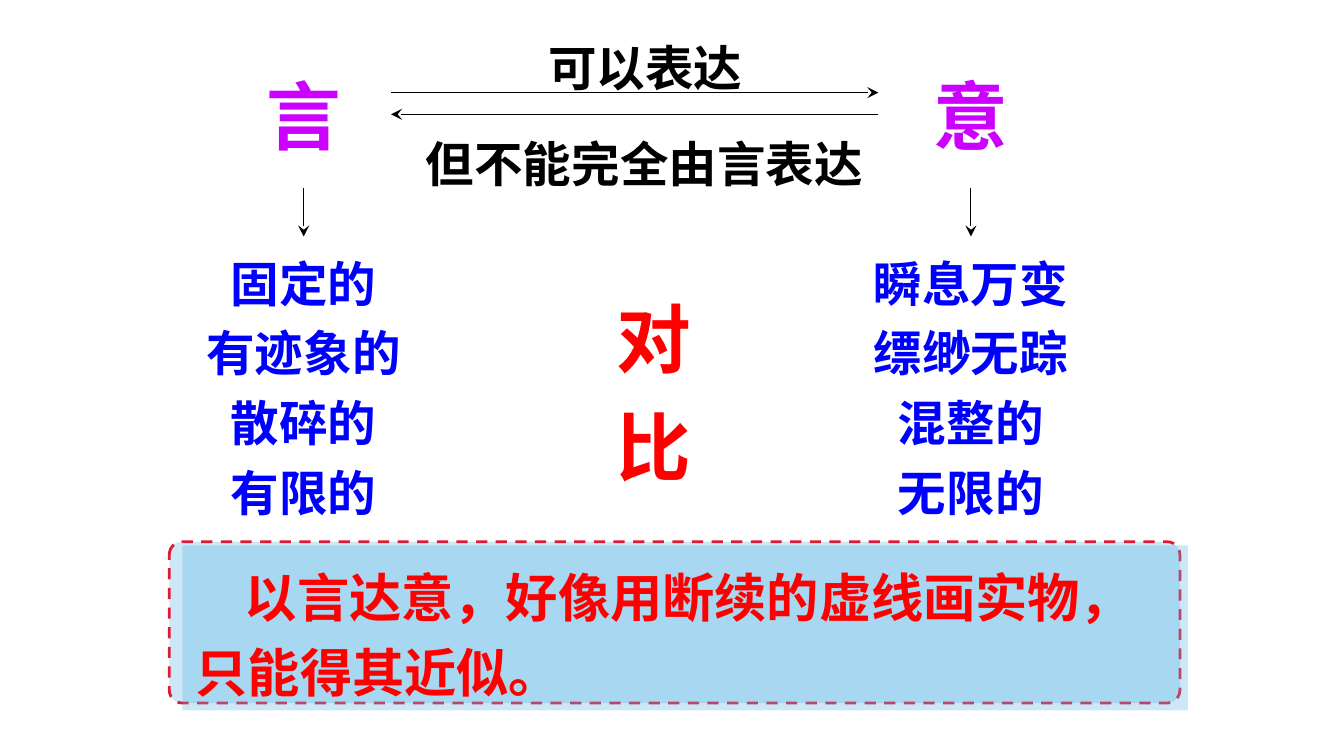
from lxml.etree import SubElement
from pptx import Presentation
from pptx.dml.color import RGBColor
from pptx.enum.dml import MSO_LINE
from pptx.enum.shapes import MSO_CONNECTOR, MSO_SHAPE
from pptx.enum.text import MSO_ANCHOR, MSO_AUTO_SIZE, PP_ALIGN
from pptx.oxml.ns import qn
from pptx.util import Cm, Pt

FONT = "Noto Sans CJK SC"
BLACK, PURPLE, BLUE, RED = "000000", "CC00FF", "0000FF", "FF0000"
SKY, CRIMSON = "58B6E5", "DE1A37"

# Centre of the column (cm), heading, traits
COLUMNS = [
    (5.74, "言", ["固定的", "有迹象的", "散碎的", "有限的"]),
    (18.35, "意", ["瞬息万变", "缥缈无踪", "混整的", "无限的"]),
]
# Text, then left, top, width, height (cm)
RELATIONS = [
    ("可以表达", (10.11, 0.38, 4.9, 1.57)),
    ("但不能完全由言表达", (7.8, 2.18, 9.5, 1.57)),
]
CONTRAST = "对比"
CONCLUSION = "以言达意，好像用断续的虚线画实物，只能得其近似。"


def color(value):
    return RGBColor.from_string(value)


def write(shape, lines, size, hue, align=PP_ALIGN.CENTER):
    frame = shape.text_frame
    frame.word_wrap = True
    frame.auto_size = MSO_AUTO_SIZE.SHAPE_TO_FIT_TEXT
    frame.vertical_anchor = MSO_ANCHOR.MIDDLE
    frame.text = "\n".join(lines)
    for para in frame.paragraphs:
        para.alignment = align
        para.line_spacing = 1.2
        font = para.font
        font.size, font.bold = Pt(size), True
        font.color.rgb = color(hue)
        font.name = FONT
        # Chinese text takes the East Asian typeface
        SubElement(font._element, qn("a:ea"), typeface=FONT)


def add_text(slide, place, lines, size, hue, align=PP_ALIGN.CENTER):
    box = slide.shapes.add_textbox(*map(Cm, place))
    write(box, lines, size, hue, align)


def add_arrow(slide, *ends):
    arrow = slide.shapes.add_connector(MSO_CONNECTOR.STRAIGHT, *map(Cm, ends))
    arrow.line.color.rgb = color(BLACK)
    arrow.line.width = Pt(0.5)
    SubElement(arrow.line._get_or_add_ln(), qn("a:tailEnd"), type="stealth")
    SubElement(arrow._element.spPr, qn("a:effectLst"))


def add_panel(slide, kind, place):
    """Add a borderless sky-blue panel with 30 % opacity."""
    panel = slide.shapes.add_shape(kind, *map(Cm, place))
    panel.shadow.inherit = False
    panel.fill.solid()
    panel.fill.fore_color.rgb = color(SKY)
    tint = panel._element.spPr.find(qn("a:solidFill"))[0]
    SubElement(tint, qn("a:alpha"), val="30000")
    panel.line.fill.background()
    return panel


def main():
    deck = Presentation()
    deck.slide_width, deck.slide_height = Cm(25.4), Cm(14.29)
    slide = deck.slides.add_slide(deck.slide_layouts[6])

    for center, heading, traits in COLUMNS:
        add_text(slide, (center - 1.25, 0.84, 2.5, 2.31), [heading], 40, PURPLE)
        add_arrow(slide, center, 3.56, center, 4.47)
        add_text(slide, (center - 2.3, 4.42, 4.6, 5.59), traits, 26, BLUE)

    add_arrow(slide, 7.39, 1.75, 16.6, 1.75)
    add_arrow(slide, 16.6, 2.16, 7.39, 2.16)
    for text, place in RELATIONS:
        add_text(slide, place, [text], 26, BLACK, PP_ALIGN.LEFT)
    add_text(slide, (11.1, 5.05, 2.5, 4.37), [CONTRAST], 40, RED)

    frame = add_panel(slide, MSO_SHAPE.ROUNDED_RECTANGLE, (3.2, 10.24, 19.1, 3.05))
    frame.adjustments[0] = 0.08
    frame.line.color.rgb = color(CRIMSON)
    frame.line.width = Pt(1.5)
    frame.line.dash_style = MSO_LINE.DASH

    panel = add_panel(slide, MSO_SHAPE.RECTANGLE, (3.45, 10.31, 19, 3.12))
    write(panel, [CONCLUSION], 28, RED, PP_ALIGN.LEFT)
    panel.text_frame.paragraphs[0]._p.pPr.set("indent", str(Cm(0.93)))

    deck.save("out.pptx")


if __name__ == "__main__":
    main()
